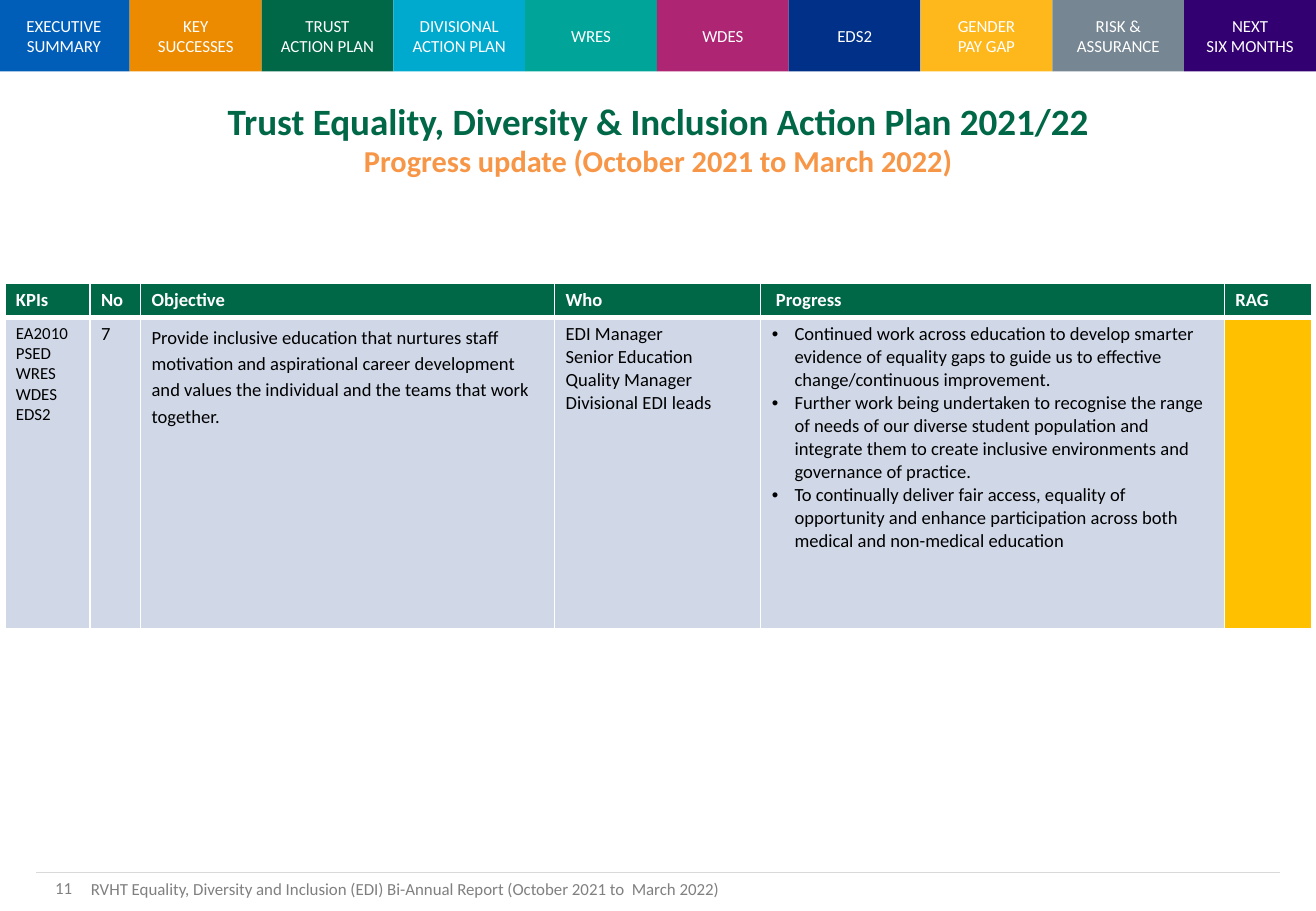
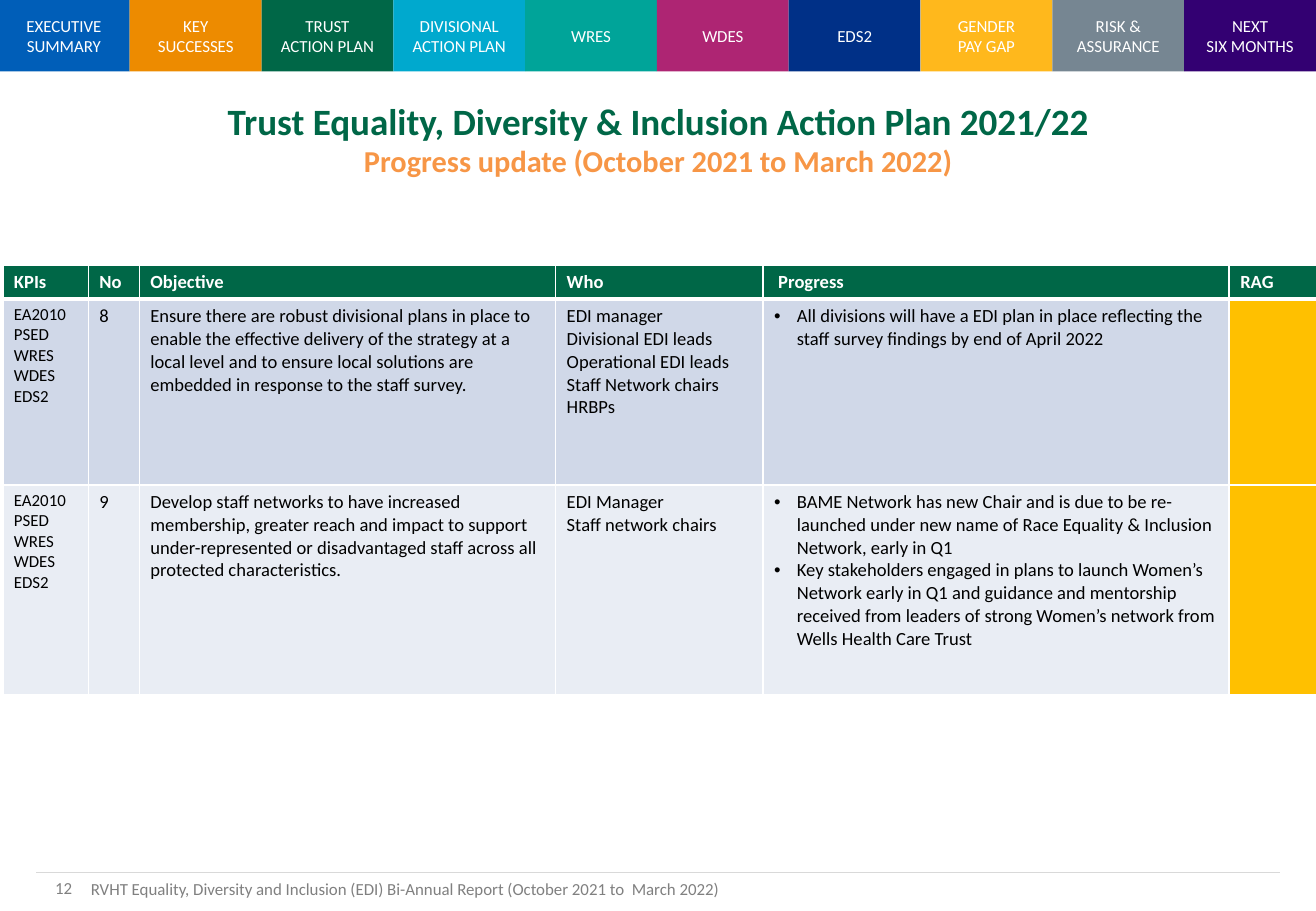
from lxml.etree import SubElement
from pptx import Presentation
from pptx.dml.color import RGBColor
from pptx.enum.shapes import MSO_CONNECTOR as Link, MSO_SHAPE as Kind
from pptx.enum.text import MSO_ANCHOR as Anchor, PP_ALIGN as Align
from pptx.oxml.ns import qn
from pptx.util import Pt

WIDTH, HEIGHT = 780, 540
FONT = "Calibri"
GREEN, ORANGE, AMBER = "006747", "F79646", "FFC000"
WHITE, BLACK, GREY, RULE = "FFFFFF", "000000", "808080", "D9D9D9"
BANDS = ("D0D8E8", "E9EDF4")

TABS = [
    ("EXECUTIVE SUMMARY", "005EB8"),
    ("KEY\nSUCCESSES", "ED8B00"),
    ("TRUST\nACTION PLAN", GREEN),
    ("DIVISIONAL\nACTION PLAN", "00A9CE"),
    ("WRES", "00A499"),
    ("WDES", "AE2573"),
    ("EDS2", "003087"),
    ("GENDER\nPAY GAP", "FFB81C"),
    ("RISK & ASSURANCE", "768692"),
    ("NEXT\nSIX MONTHS", "330072"),
]
TITLE = "Trust Equality, Diversity & Inclusion Action Plan 2021/22"
UPDATE = "Progress update (October 2021 to March 2022)"
FOOTER = ("RVHT Equality, Diversity and Inclusion (EDI) Bi-Annual Report "
          "(October 2021 to  March 2022)")

HEADS = ("KPIs", "No", "Objective", "Who", " Progress", "RAG")
COLS = (50.4, 30, 245.4, 122.2, 274.8, 51.8)
KPIS = "EA2010\nPSED\nWRES\nWDES\nEDS2"

PAGES = [
    dict(number=11, left=2.9, top=168, width=774.6, heights=(20, 184.3),
         leading=1.15, after=10, rows=[
        ("7",
         "Provide inclusive education that nurtures staff motivation and "
         "aspirational career development and values the individual and the "
         "teams that work together.",
         "EDI Manager\nSenior Education\nQuality Manager\nDivisional EDI leads",
         "Continued work across education to develop smarter evidence of "
         "equality gaps to guide us to effective change/continuous improvement.\n"
         "Further work being undertaken to recognise the range of needs of our "
         "diverse student population and integrate them to create inclusive "
         "environments and governance of practice.\n"
         "To continually deliver fair access, equality of opportunity and "
         "enhance participation across both medical and non-medical education"),
    ]),
    dict(number=12, left=1.7, top=157, width=779, heights=(20, 110.2, 124.6),
         leading=None, after=0, rows=[
        ("8",
         "Ensure there are robust divisional plans in place to enable the "
         "effective delivery of the strategy at a local level and to ensure "
         "local solutions are embedded in response to the staff survey.",
         "EDI manager\nDivisional EDI leads\nOperational EDI leads\n"
         "Staff Network chairs\nHRBPs",
         "All divisions will have a EDI plan in place reflecting the staff "
         "survey findings by end of April 2022"),
        ("9",
         "Develop staff networks to have increased membership, greater reach "
         "and impact to support under-represented or disadvantaged staff across "
         "all protected characteristics.",
         "EDI Manager\nStaff network chairs",
         "BAME Network has new Chair and is due to be re- launched under new "
         "name of Race Equality & Inclusion Network, early in Q1\n"
         "Key stakeholders engaged in plans to launch Women’s Network early in "
         "Q1 and guidance and mentorship received from leaders of strong "
         "Women’s network from Wells Health Care Trust"),
    ]),
]


def paint(fill, color):
    fill.solid()
    fill.fore_color.rgb = RGBColor.from_string(color)


def add_run(para, text, size, color, bold=False):
    run = para.add_run()
    run.text = text
    font = run.font
    font.name, font.size, font.bold = FONT, Pt(size), bold
    font.color.rgb = RGBColor.from_string(color)


def write(frame, text, size=11, color=BLACK, bold=False, align=Align.LEFT,
          bullet=False, leading=None, after=0):
    """Fill a text frame, one paragraph for each line of text."""
    frame.word_wrap = True
    for i, line in enumerate(text.split("\n")):
        para = frame.add_paragraph() if i else frame.paragraphs[0]
        para.alignment, para.space_after = align, Pt(after)
        if leading:
            para.line_spacing = leading
        if bullet:
            props = para._p.get_or_add_pPr()
            props.set("marL", str(Pt(13.5)))
            props.set("indent", str(-Pt(13.5)))
            SubElement(props, qn("a:buFont"), typeface="Arial")
            SubElement(props, qn("a:buChar"), char="•")
        add_run(para, line, size, color, bold)


def add_text(slide, box, text, anchor=Anchor.TOP, **style):
    frame = slide.shapes.add_textbox(*map(Pt, box)).text_frame
    frame.vertical_anchor = anchor
    write(frame, text, size=10, color=GREY, **style)


def add_tabs(slide):
    pitch = 78.12
    for i, (label, color) in enumerate(TABS):
        left = WIDTH - pitch * (len(TABS) - i)
        tab = slide.shapes.add_shape(Kind.RECTANGLE, Pt(left), 0,
                                     Pt(pitch), Pt(42.4))
        tab.shadow.inherit = False
        paint(tab.fill, color)
        tab.line.fill.background()
        tab.text_frame.vertical_anchor = Anchor.MIDDLE
        write(tab.text_frame, label, size=10, color=WHITE, align=Align.CENTER)


def add_footer(slide):
    rule = slide.shapes.add_connector(Link.STRAIGHT, Pt(21.6), Pt(517),
                                      Pt(758.9), Pt(517))
    rule.line.width = Pt(0.75)
    rule.line.color.rgb = RGBColor.from_string(RULE)
    SubElement(rule.element.spPr, qn("a:effectLst"))
    add_text(slide, (46.8, 517, 612, 19.4), FOOTER)


def set_layout(layout, slide):
    """Draw the shared parts on a slide, then move them to its layout."""
    for holder in list(layout.placeholders):
        if holder.placeholder_format.idx:
            layout.shapes.element.remove(holder.element)
    title = layout.placeholders[0]
    title.left, title.top, title.width, title.height = map(
        Pt, (0.7, 53.3, 779, 57.6))
    add_tabs(slide)
    add_footer(slide)
    for shape in list(slide.shapes):
        if not shape.is_placeholder:
            layout.shapes.element.append(shape.element)


def set_title(slide):
    frame = slide.shapes.title.text_frame
    frame.vertical_anchor = Anchor.MIDDLE
    para = frame.paragraphs[0]
    para.alignment = Align.CENTER
    add_run(para, TITLE, 22, GREEN, True)
    para.add_line_break()
    SubElement(para._p[-1], qn("a:rPr"), sz="2200")
    add_run(para, UPDATE, 18, ORANGE, True)


def set_cell(cell, fill, top=1, bottom=1):
    """Set fill, margins and white borders."""
    cell.margin_left = cell.margin_right = Pt(6.6)
    cell.margin_top = cell.margin_bottom = Pt(3.3)
    paint(cell.fill, fill)
    props = cell._tc.get_or_add_tcPr()
    sides = (("L", 1), ("R", 1), ("T", top), ("B", bottom))
    for i, (side, width) in enumerate(sides):
        line = SubElement(props, qn("a:ln" + side), w=str(Pt(width)))
        solid = SubElement(line, qn("a:solidFill"))
        SubElement(solid, qn("a:srgbClr"), val=WHITE)
        props.insert(i, line)


def add_plan(slide, page):
    rows, heights = page["rows"], page["heights"]
    box = page["left"], page["top"], page["width"], sum(heights)
    table = slide.shapes.add_table(len(rows) + 1, len(COLS),
                                   *map(Pt, box)).table
    table.horz_banding = False
    for col, share in zip(table.columns, COLS):
        col.width = Pt(page["width"] * share / sum(COLS))
    for row, height in zip(table.rows, heights):
        row.height = Pt(height)
    for i, head in enumerate(HEADS):
        cell = table.cell(0, i)
        set_cell(cell, GREEN, bottom=3)
        cell.vertical_anchor = Anchor.MIDDLE
        write(cell.text_frame, head, color=WHITE, bold=True)
    styles = (dict(size=10), {},
              dict(leading=page["leading"], after=page["after"]),
              {}, dict(bullet=True))
    for r, row in enumerate(rows, 1):
        band = BANDS[(r - 1) % 2]
        top = 3 if r == 1 else 1
        for c, (text, style) in enumerate(zip((KPIS, *row), styles)):
            cell = table.cell(r, c)
            set_cell(cell, band, top)
            write(cell.text_frame, text, **style)
        set_cell(table.cell(r, len(COLS) - 1), AMBER, top)


def main():
    deck = Presentation()
    deck.slide_width, deck.slide_height = Pt(WIDTH), Pt(HEIGHT)
    layout = deck.slide_layouts[5]
    for i, page in enumerate(PAGES):
        slide = deck.slides.add_slide(layout)
        if i == 0:
            set_layout(layout, slide)
        set_title(slide)
        add_plan(slide, page)
        add_text(slide, (5.8, 513.4, 44, 26), str(page["number"]),
                 anchor=Anchor.MIDDLE, align=Align.RIGHT)
    deck.save("out.pptx")


if __name__ == "__main__":
    main()
